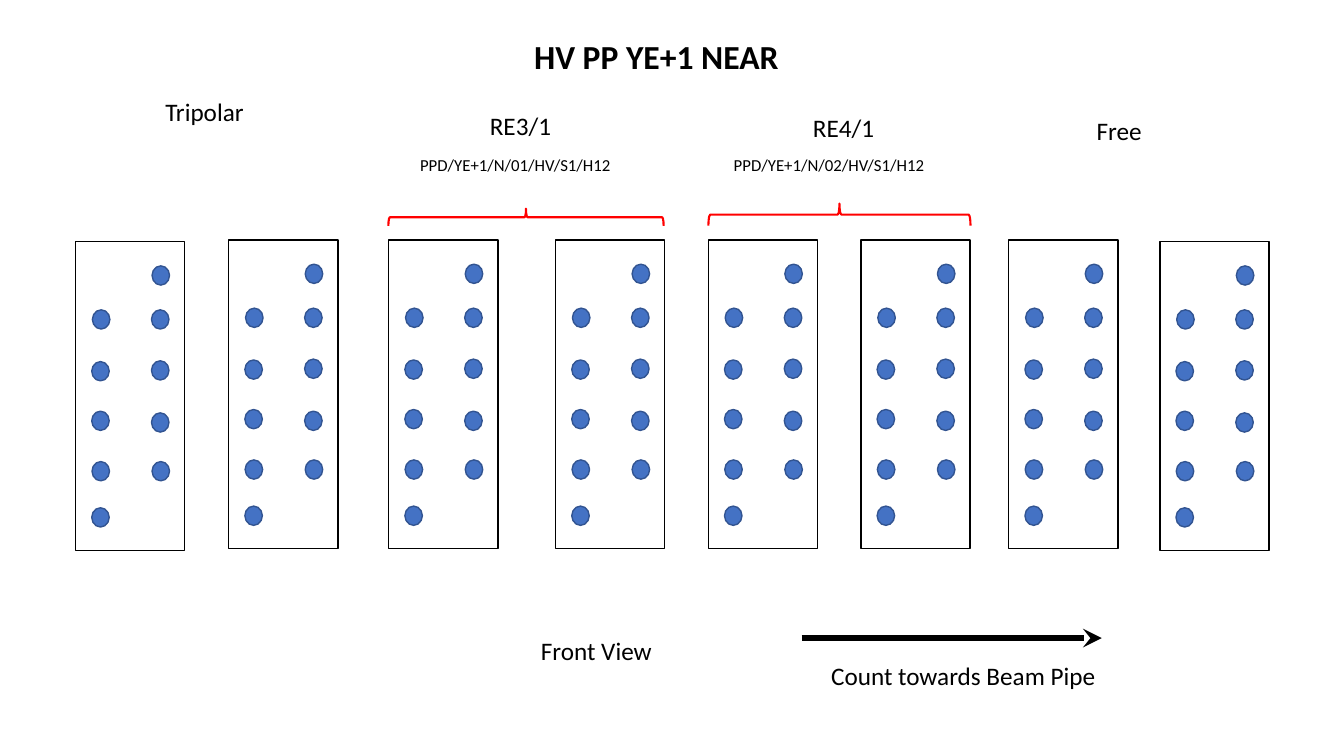
"""Front view of the HV patch panels on YE+1 near side."""
from dataclasses import dataclass

import pptx
import pptx.dml.color
import pptx.enum.dml
import pptx.enum.shapes
import pptx.enum.text
import pptx.oxml
import pptx.util
from lxml import etree

Pt = pptx.util.Pt
RGB = pptx.dml.color.RGBColor
SHAPE = pptx.enum.shapes.MSO_SHAPE


@dataclass(frozen=True)
class Theme:
    font: str = "Calibri"
    ink: RGB = RGB(0x00, 0x00, 0x00)
    pin: RGB = RGB(0x44, 0x72, 0xC4)
    pin_edge: RGB = RGB(0x32, 0x54, 0x91)
    brace: RGB = RGB(0xFF, 0x00, 0x00)
    title: float = 24
    label: float = 18
    code: float = 12


PANEL_W, PANEL_H = 78, 220.5
PIN_W, PIN_H = 12.5, 13.75
PANELS = [(54, 172.7), (163.4, 171.5), (277.7, 171.5), (396.9, 171.5),
          (506, 171.5), (615, 171.5), (720.6, 171.5), (828.5, 172.7)]
PINS = [(54.6, 17.2), (54.2, 48.6), (54.2, 85), (54.2, 122.2), (54.6, 157),
        (12, 48.6), (11.5, 85.6), (11.5, 121), (11.7, 157), (11.5, 190)]


class Diagram:
    def __init__(self, slide, theme):
        self.slide, self.theme = slide, theme

    def shape(self, shapes, kind, x, y, w, h, line, width=1, fill=None):
        s = shapes.add_shape(kind, Pt(x), Pt(y), Pt(w), Pt(h))
        s.shadow.inherit = False
        if fill is None:
            s.fill.background()
        else:
            s.fill.solid()
            s.fill.fore_color.rgb = fill
        s.line.color.rgb = line
        s.line.width = Pt(width)
        return s

    def panel(self, x, y):
        shapes = self.slide.shapes.add_group_shape().shapes
        t = self.theme
        self.shape(shapes, SHAPE.RECTANGLE, x, y, PANEL_W, PANEL_H, t.ink)
        for dx, dy in PINS:
            self.shape(shapes, SHAPE.OVAL, x + dx, y + dy, PIN_W, PIN_H,
                       t.pin_edge, fill=t.pin)

    def brace(self, x, y, span, depth):
        left, top = x + (span - depth) / 2, y - (span - depth) / 2
        s = self.shape(self.slide.shapes, SHAPE.LEFT_BRACE, left, top, depth,
                       span, self.theme.brace, 1.5)
        s.rotation = 90

    def text(self, text, x, y, w, h, size, bold=False, wrap=True):
        tf = self.slide.shapes.add_textbox(Pt(x), Pt(y), Pt(w), Pt(h)).text_frame
        tf.word_wrap = wrap
        tf.auto_size = pptx.enum.text.MSO_AUTO_SIZE.SHAPE_TO_FIT_TEXT
        tf.text = text
        font = tf.paragraphs[0].runs[0].font
        font.name, font.size, font.bold = self.theme.font, Pt(size), bold
        font.color.rgb = self.theme.ink

    def arrow(self, x1, x2, y):
        c = self.slide.shapes.add_connector(
            pptx.enum.shapes.MSO_CONNECTOR.STRAIGHT, Pt(x1), Pt(y), Pt(x2), Pt(y))
        c.line.color.rgb = self.theme.ink
        c.line.width = Pt(4.5)
        qn = pptx.oxml.ns.qn
        etree.SubElement(c.line._get_or_add_ln(), qn("a:tailEnd"), type="stealth")
        etree.SubElement(c._element.spPr, qn("a:effectLst"))


def main():
    prs = pptx.Presentation()
    prs.slide_width, prs.slide_height = Pt(960), Pt(540)
    theme = Theme()
    d = Diagram(prs.slides.add_slide(prs.slide_layouts[6]), theme)

    for x, y in PANELS:
        d.panel(x, y)

    d.text("HV PP YE+1 NEAR", 374.4, 21.8, 217.5, 36, theme.title, bold=True)
    for label, x, y, w in [("Tripolar", 111, 65, 113), ("RE3/1", 342.8, 75.5, 59),
                           ("RE4/1", 573.6, 76.5, 59), ("Free", 776.2, 78.5, 113)]:
        d.text(label, x, y, w, 29, theme.label)
    for code, x in [("PPD/YE+1/N/01/HV/S1/H12", 293), ("PPD/YE+1/N/02/HV/S1/H12", 517)]:
        d.text(code, x, 106.8, 173, 21.8, theme.code)

    d.brace(277.4, 149, 196.6, 12.4)
    d.brace(506, 145.4, 187.2, 15.8)

    d.text("Front View", 379.3, 450.3, 94, 29, theme.label, wrap=False)
    d.arrow(572.6, 787, 455.8)
    d.text("Count towards Beam Pipe", 586.6, 468.3, 205, 29, theme.label, wrap=False)
    prs.save("out.pptx")


if __name__ == "__main__":
    main()
